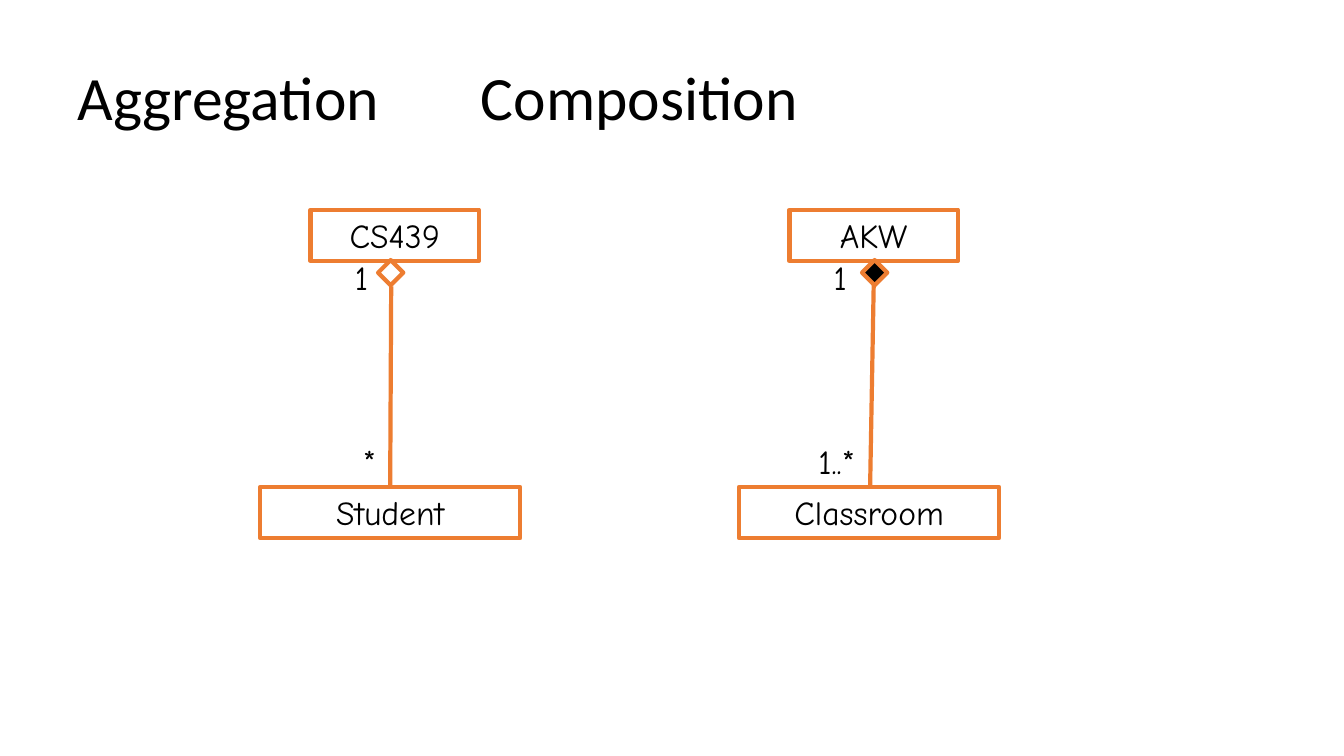
"""Draw aggregation and composition side by side as small class diagrams."""
from dataclasses import dataclass

from lxml import etree
from pptx import Presentation
from pptx.dml.color import RGBColor
from pptx.enum import shapes, text
from pptx.oxml import ns
from pptx.util import Inches, Pt

ORANGE, BLACK = "ED7D31", "000000"
PANEL_STEP = 4.75
LABEL_FORMAT = {"name": "Comic Neue", "size": Pt(24)}
TITLE_FORMAT = {"name": "Calibri", "size": Pt(44)}
LEFT, CENTER, RIGHT = text.PP_ALIGN.LEFT, text.PP_ALIGN.CENTER, text.PP_ALIGN.RIGHT
GROW, FIXED = text.MSO_AUTO_SIZE.SHAPE_TO_FIT_TEXT, text.MSO_AUTO_SIZE.NONE


@dataclass
class Relation:
    owner: str
    member: str
    many: str
    diamond_left: float
    diamond_fill: str
    link: tuple[float, float, float, float]


RELATIONS = [
    Relation("CS439", "Student", "*", 3.75, "", (3.88, 2.84, 3.87, 4.84)),
    Relation("AKW", "Classroom", "1..*", 8.55, BLACK, (8.67, 2.59, 8.63, 4.83)),
]


def color(value: str) -> RGBColor:
    return RGBColor.from_string(value)


def write(shape, words: str, align, font_format: dict, autosize=GROW):
    frame = shape.text_frame
    frame_format = {"word_wrap": True, "auto_size": autosize,
                    "vertical_anchor": text.MSO_ANCHOR.TOP}
    for name, value in frame_format.items():
        setattr(frame, name, value)
    para = frame.paragraphs[0]
    para.alignment = align
    span = para.add_run()
    span.text = words
    for name, value in font_format.items():
        setattr(span.font, name, value)
    span.font.color.rgb = color(BLACK)
    return frame


def add_outline(page, preset, left: float, top: float, width: float, height: float,
                fill: str = ""):
    shape = page.shapes.add_shape(
        preset, Inches(left), Inches(top), Inches(width), Inches(height))
    shape.shadow.inherit = False
    if fill:
        shape.fill.solid()
        shape.fill.fore_color.rgb = color(fill)
    else:
        shape.fill.background()
    shape.line.color.rgb = color(ORANGE)
    shape.line.width = Pt(3)
    return shape


def add_class(page, name: str, left: float, top: float, width: float) -> None:
    box = add_outline(page, shapes.MSO_SHAPE.RECTANGLE, left, top, width, 0.51)
    write(box, name, CENTER, LABEL_FORMAT)


def add_label(page, words: str, left: float, top: float, width: float, align) -> None:
    box = page.shapes.add_textbox(Inches(left), Inches(top), Inches(width), Inches(0.5))
    write(box, words, align, LABEL_FORMAT)


def add_link(page, ends: tuple[float, float, float, float]) -> None:
    link = page.shapes.add_connector(
        shapes.MSO_CONNECTOR.STRAIGHT, *(Inches(end) for end in ends))
    link.line.color.rgb = color(ORANGE)
    link.line.width = Pt(3)
    etree.SubElement(link._element.spPr, ns.qn("a:effectLst"))


def add_relation(page, relation: Relation, shift: float) -> None:
    add_class(page, relation.member, 2.58 + shift, 4.83, 2.58)
    add_link(page, relation.link)
    add_class(page, relation.owner, 3.08 + shift, 2.08, 1.67)
    add_label(page, relation.many, 3 + shift, 4.33, 0.83, RIGHT)
    add_label(page, "1", 3.42 + shift, 2.5, 0.42, LEFT)
    add_outline(page, shapes.MSO_SHAPE.DIAMOND, relation.diamond_left, 2.58,
                0.25, 0.25, relation.diamond_fill)


def add_title(page, words: str) -> None:
    box = page.shapes.add_textbox(Inches(0.67), Inches(0.5), Inches(11.78), Inches(1))
    frame = write(box, words, LEFT, TITLE_FORMAT, FIXED)
    frame.vertical_anchor = text.MSO_ANCHOR.MIDDLE
    frame.paragraphs[0].line_spacing = 0.9


def main() -> None:
    deck = Presentation()
    deck.slide_width, deck.slide_height = Inches(13.33), Inches(7.5)
    page = deck.slides.add_slide(deck.slide_layouts[6])
    add_title(page, "Aggregation\t\t\tComposition")
    for index, relation in enumerate(RELATIONS):
        add_relation(page, relation, index * PANEL_STEP)
    deck.save("out.pptx")


if __name__ == "__main__":
    main()
